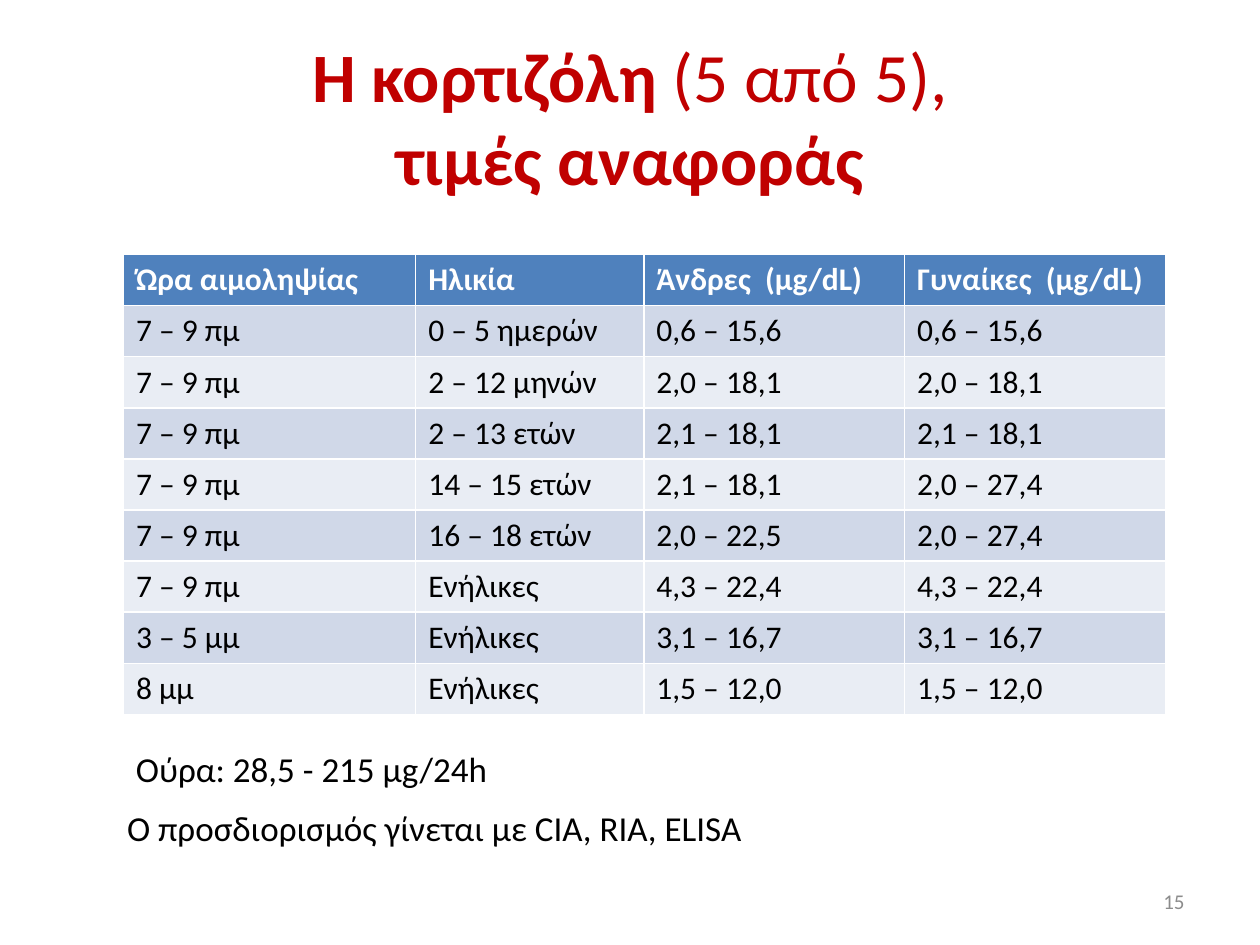
"""Build the slide with cortisol reference values."""
from pptx import Presentation
from pptx.dml.color import RGBColor
from pptx.enum.text import MSO_ANCHOR as Anchor, MSO_AUTO_SIZE as AutoSize, PP_ALIGN as Align
from pptx.oxml.ns import qn
from pptx.util import Inches, Pt


def color(value):
    return RGBColor.from_string(value)


def add_run(paragraph, text, size, ink, **formats):
    run = paragraph.add_run()
    run.text = text
    run.font.color.rgb = color(ink)
    for name, value in {"name": "Calibri", "size": Pt(size), **formats}.items():
        setattr(run.font, name, value)
    return run


deck = Presentation()
deck.slide_width, deck.slide_height = Inches(10), Inches(7.5)
slide = deck.slides.add_slide(deck.slide_layouts[5])

title = slide.shapes.title
title_place = {"left": 0.5, "top": 0.3, "width": 9, "height": 1.25}
for name, value in title_place.items():
    setattr(title, name, Inches(value))
title_format = {"auto_size": AutoSize.NONE, "vertical_anchor": Anchor.MIDDLE, "word_wrap": True}
for name, value in title_format.items():
    setattr(title.text_frame, name, value)
heading = title.text_frame.paragraphs[0]
heading.alignment = Align.CENTER
add_run(heading, "Η κορτιζόλη ", 39.6, "C00000", bold=True)
add_run(heading, "(5 από 5),", 39.6, "C00000", bold=False)
heading.add_line_break()
add_run(heading, "τιμές αναφοράς", 39.6, "C00000", bold=True)

reference_values = [
    ("Ώρα αιμοληψίας", "Ηλικία", "Άνδρες  (μg/dL)", "Γυναίκες  (μg/dL)"),
    ("7 – 9 πμ", "0 – 5 ημερών", "0,6 – 15,6", "0,6 – 15,6"),
    ("7 – 9 πμ", "2 – 12 μηνών", "2,0 – 18,1", "2,0 – 18,1"),
    ("7 – 9 πμ", "2 – 13 ετών", "2,1 – 18,1", "2,1 – 18,1"),
    ("7 – 9 πμ", "14 – 15 ετών", "2,1 – 18,1", "2,0 – 27,4"),
    ("7 – 9 πμ", "16 – 18 ετών", "2,0 – 22,5", "2,0 – 27,4"),
    ("7 – 9 πμ", "Ενήλικες", "4,3 – 22,4", "4,3 – 22,4"),
    ("3 – 5 μμ", "Ενήλικες", "3,1 – 16,7", "3,1 – 16,7"),
    ("8 μμ", "Ενήλικες", "1,5 – 12,0", "1,5 – 12,0"),
]
column_widths = [2.32, 1.81, 2.07, 2.07]
reference_table = slide.shapes.add_table(
    len(reference_values), len(column_widths),
    Inches(0.98), Inches(2.02), Inches(sum(column_widths)), Inches(3.64),
).table
for column, width in zip(reference_table.columns, column_widths):
    column.width = Inches(width)
for index, (row, values) in enumerate(zip(reference_table.rows, reference_values)):
    is_header = index == 0
    band = "4F81BD" if is_header else ("E9EDF4", "D0D8E8")[index % 2]
    ink = "FFFFFF" if is_header else "000000"
    for cell, value in zip(row.cells, values):
        cell.fill.solid()
        cell.fill.fore_color.rgb = color(band)
        add_run(cell.text_frame.paragraphs[0], value, 18, ink, bold=is_header)

notes = [
    ("Ούρα: 28,5 - 215 μg/24h", 0.98, 5.88, 3.01),
    ("Ο προσδιορισμός γίνεται με CIA, RIA, ELISA", 0.91, 6.35, 5.12),
]
for text, left, top, width in notes:
    note = slide.shapes.add_textbox(Inches(left), Inches(top), Inches(width), Inches(0.44))
    note.text_frame.word_wrap = False
    note.text_frame.auto_size = AutoSize.SHAPE_TO_FIT_TEXT
    add_run(note.text_frame.paragraphs[0], text, 20, "000000")

page = slide.shapes.add_textbox(Inches(7.17), Inches(6.95), Inches(2.33), Inches(0.4))
page.text_frame.word_wrap = True
page.text_frame.vertical_anchor = Anchor.MIDDLE
page_line = page.text_frame.paragraphs[0]
page_line.alignment = Align.RIGHT
page_field = add_run(page_line, "15", 12, "8C8C8C")._r
page_field.tag = qn("a:fld")
page_field.set("id", "{B6F15528-21DE-4FAA-801E-634DDDAF4B2B}")
page_field.set("type", "slidenum")
deck.element.set("firstSlideNum", "15")

deck.save("out.pptx")
